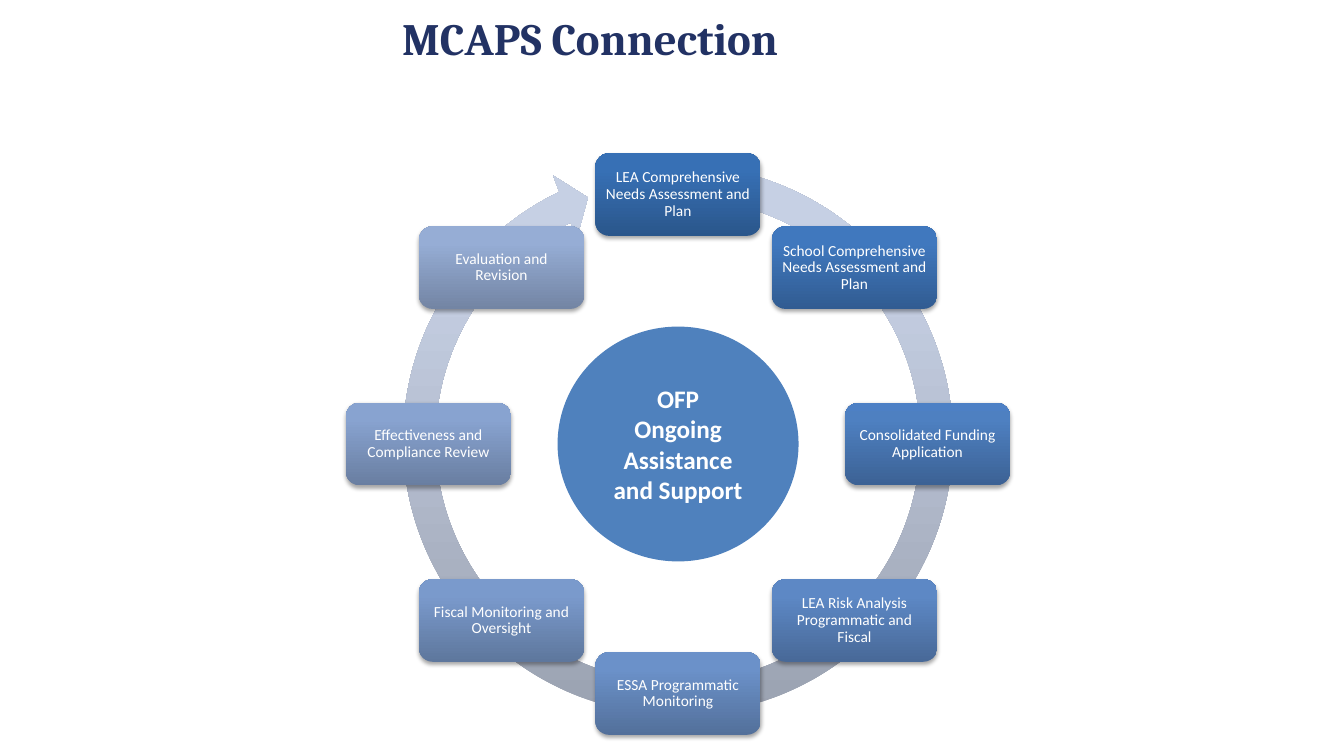
import math

import pptx
import pptx.util
import pptx.dml.color
import pptx.enum.shapes
import pptx.enum.text
import pptx.oxml
import pptx.oxml.ns

Inches = pptx.util.Inches
SHAPE = pptx.enum.shapes.MSO_SHAPE
ALIGN = pptx.enum.text.PP_ALIGN
ANCHOR = pptx.enum.text.MSO_ANCHOR

COLORS = {
    "white": "FFFFFF",
    "navy": "223264",
    "hub": "4F81BD",
    "shade": "000000",
}
# Gradient colours from bottom to top
RING = ("99A0AF", "C6D0E4", "C7D1E5")
# Steps run clockwise from the top
STEPS = [
    ("LEA Comprehensive Needs Assessment and Plan", ("2A568B", "3770B5", "3570B8")),
    ("School Comprehensive Needs Assessment and Plan", ("315C92", "4078BE", "3E78C1")),
    ("Consolidated Funding Application", ("3C6295", "4E80C1", "4D80C5")),
    ("LEA Risk Analysis Programmatic and Fiscal", ("486998", "5D88C5", "5B89C8")),
    ("ESSA Programmatic Monitoring", ("53709B", "6B91C9", "6A92CB")),
    ("Fiscal Monitoring and Oversight", ("5E779D", "7A9ACC", "799BCF")),
    ("Effectiveness and Compliance Review", ("697EA1", "88A3D0", "87A4D3")),
    ("Evaluation and Revision", ("7385A4", "96ADD5", "95ADD7")),
]


def rgb(name):
    return pptx.dml.color.RGBColor.from_string(COLORS[name])


def write(shape, text, size, color="white", font="Calibri", bold=False,
          align=ALIGN.CENTER, anchor=ANCHOR.MIDDLE, inset=(0.1, 0.05), lead=None):
    frame = shape.text_frame
    frame.word_wrap = True
    frame.vertical_anchor = anchor
    frame.margin_left = frame.margin_right = Inches(inset[0])
    frame.margin_top = frame.margin_bottom = Inches(inset[1])
    para = frame.paragraphs[0]
    para.alignment = align
    para.line_spacing = lead
    run = para.add_run()
    run.text = text
    run.font.size = pptx.util.Pt(size)
    run.font.name = font
    run.font.bold = bold
    run.font.color.rgb = rgb(color)


def draw(slide, kind, mid, size):
    """Add a plain shape centred on a point."""
    shape = slide.shapes.add_shape(
        kind, Inches(mid[0] - size[0] / 2), Inches(mid[1] - size[1] / 2),
        Inches(size[0]), Inches(size[1]))
    shape.shadow.inherit = False
    shape.line.fill.background()
    return shape


def blend(shape, tones):
    """Fill a shape with a three-stop gradient that rises from its base."""
    stops = "".join(
        f'<a:gs pos="{pos}"><a:srgbClr val="{tone}"/></a:gs>'
        for pos, tone in zip((0, 80000, 100000), tones))
    shape.fill.background()
    old = shape._element.spPr.find(pptx.oxml.ns.qn("a:noFill"))
    old.getparent().replace(old, pptx.oxml.parse_xml(
        f'<a:gradFill {pptx.oxml.ns.nsdecls("a")} rotWithShape="1">'
        f'<a:gsLst>{stops}</a:gsLst><a:lin ang="16200000" scaled="0"/></a:gradFill>'))


def shade(shape):
    """Drop a soft shadow below a shape."""
    effects = shape._element.spPr.find(pptx.oxml.ns.qn("a:effectLst"))
    effects.append(pptx.oxml.parse_xml(
        f'<a:outerShdw {pptx.oxml.ns.nsdecls("a")} blurRad="{pptx.util.Pt(3.1)}" '
        f'dist="{pptx.util.Pt(1.8)}" dir="5400000" rotWithShape="0">'
        f'<a:srgbClr val="{COLORS["shade"]}"><a:alpha val="35000"/></a:srgbClr>'
        f'</a:outerShdw>'))


def title(slide, left, top, width, height):
    box = slide.shapes.add_textbox(
        Inches(left), Inches(top), Inches(width), Inches(height))
    write(box, "MCAPS Connection", 32, color="navy", font="Cambria", bold=True,
          align=ALIGN.LEFT, anchor=ANCHOR.TOP)


def cycle(slide, left, top, width, height):
    """Place the steps on a circle whose outer cards touch the given box."""
    card = (1.64, 0.82)
    mid = (left + width / 2, top + height / 2)
    reach = (height - card[1]) / 2

    # Circular arrow behind the cards
    ring = draw(slide, SHAPE.CIRCULAR_ARROW, (mid[0], mid[1] - 0.04), (5.8, 5.8))
    for i, part in enumerate((5.54, 330.68, 14646.3, 16875.9, 5.76)):
        ring.adjustments[i] = part / 100
    blend(ring, RING)

    # Step cards
    for i, (text, tones) in enumerate(STEPS):
        turn = 2 * math.pi * i / len(STEPS)
        spot = (mid[0] + reach * math.sin(turn), mid[1] - reach * math.cos(turn))
        step = draw(slide, SHAPE.ROUNDED_RECTANGLE, spot, card)
        blend(step, tones)
        shade(step)
        write(step, text, 11, inset=(0.05, 0.05), lead=0.9)

    # Hub
    hub = draw(slide, SHAPE.OVAL, mid, (2.39, 2.33))
    hub.fill.solid()
    hub.fill.fore_color.rgb = rgb("hub")
    write(hub, "OFP Ongoing Assistance and Support", 18, bold=True, inset=(0.19, 0.05))


def main():
    deck = pptx.Presentation()
    deck.slide_width = Inches(13.33)
    deck.slide_height = Inches(7.5)
    slide = deck.slides.add_slide(deck.slide_layouts[6])
    cycle(slide, 3.43, 1.52, 6.59, 5.77)
    title(slide, 3.89, 0.06, 6, 1.17)
    deck.save("out.pptx")


if __name__ == "__main__":
    main()
